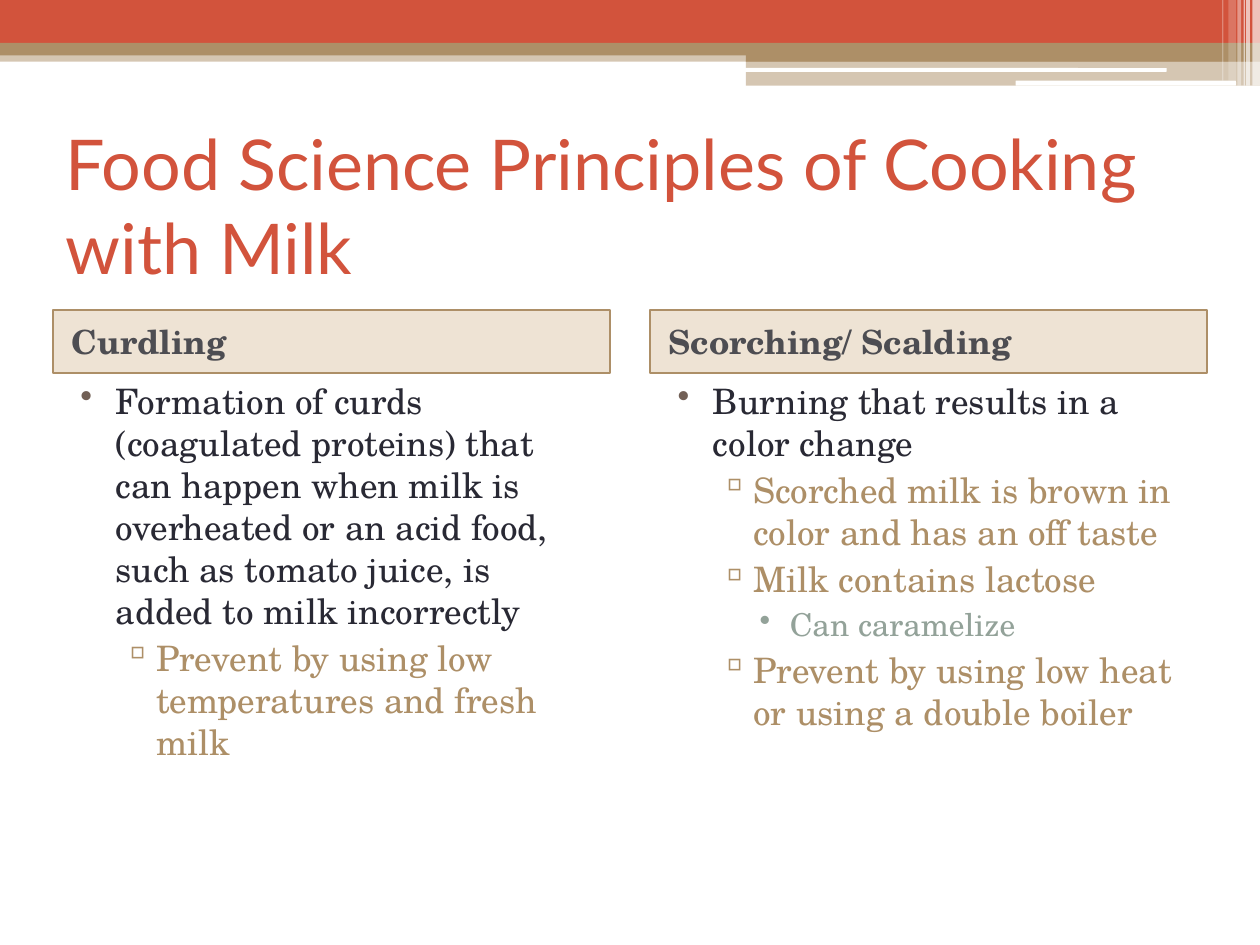
import pptx
import pptx.util
import pptx.dml.color
import pptx.enum.shapes
import pptx.enum.text
import pptx.oxml
import pptx.oxml.ns
from lxml import etree

Inches, Pt = pptx.util.Inches, pptx.util.Pt
KIND = pptx.enum.shapes.MSO_SHAPE
ANCHOR = pptx.enum.text.MSO_ANCHOR
LEFT = pptx.enum.text.PP_ALIGN.LEFT
SERIF = "TeX Gyre Schola"
RED, TAN, WHITE = "D2533C", "AD8F67", "FFFFFF"
qn = pptx.oxml.ns.qn


def paint(fmt, color, alpha=100):
    """Fill a shape, line or font with a colour, opaque by default."""
    fmt.solid()
    fmt.fore_color.rgb = pptx.dml.color.RGBColor.from_string(color)
    if alpha < 100:
        tint = fmt._xPr.find(qn("a:solidFill"))[0]
        etree.SubElement(tint, qn("a:alpha")).set("val", str(alpha * 1000))


def write(para, text, font, size, color, bold=False):
    """Add one run to a paragraph."""
    para.alignment = LEFT
    run = para.add_run()
    run.text = text
    run.font.name, run.font.size, run.font.bold = font, Pt(size), bold
    paint(run.font.fill, color)


prs = pptx.Presentation()
prs.slide_width, prs.slide_height = Inches(10), Inches(7.5)
slide = prs.slides.add_slide(prs.slide_layouts[5])
shapes = slide.shapes

# Top band: left, top, width, height, colour, opacity, kind
RECT, ROUND = KIND.RECTANGLE, KIND.ROUNDED_RECTANGLE
bars = [
    (0, 0.4, 10, 0.09, TAN, 50, RECT),
    (0, 0, 10, 0.34, RED, 100, RECT),
    (0, 0.34, 10, 0.1, TAN, 100, RECT),
    (5.92, 0.39, 4.08, 0.1, TAN, 100, RECT),
    (5.92, 0.48, 4.08, 0.2, TAN, 50, RECT),
    (5.91, 0.54, 3.35, 0.03, WHITE, 100, ROUND),
    (8.06, 0.64, 1.75, 0.04, WHITE, 100, ROUND),
]
# White stripes at the right end: left, width, height, opacity
stripes = [
    (9.94, 0.06, 0.68, 65),
    (9.89, 0.03, 0.68, 65),
    (9.87, 0.01, 0.68, 60),
    (9.82, 0.03, 0.68, 40),
    (9.75, 0.06, 0.64, 20),
    (9.7, 0.01, 0.64, 30),
]
bars += [(x, 0, w, h, WHITE, alpha, RECT) for x, w, h, alpha in stripes]
for x, y, w, h, color, alpha, kind in bars:
    bar = shapes.add_shape(kind, Inches(x), Inches(y), Inches(w), Inches(h))
    bar.shadow.inherit = False
    bar.line.fill.background()
    paint(bar.fill, color, alpha)

# Title
title = shapes.title
title.left, title.top = Inches(0.42), Inches(0.83)
title.width, title.height = Inches(9.17), Inches(1.59)
title.text_frame.vertical_anchor = ANCHOR.MIDDLE
title.text_frame.word_wrap = True
write(title.text_frame.paragraphs[0],
      "Food Science Principles of Cooking with Milk", "Lato", 40, RED)

# List levels: margin, indent, bullet, bullet colour, size, text colour
levels = [
    (0.4, -0.28, "•", "726056", 20, "292934"),
    (0.72, -0.27, "▫", TAN, 20, TAN),
    (1.01, -0.24, "•", "93A299", 18, "93A299"),
]
columns = [
    (0.42, "Curdling", [
        (0, "Formation of curds (coagulated proteins) that can happen when "
            "milk is overheated or an acid food, such as tomato juice, is "
            "added to milk incorrectly"),
        (1, "Prevent by using low temperatures and fresh milk"),
    ]),
    (5.16, "Scorching/ Scalding", [
        (0, "Burning that results in a color change"),
        (1, "Scorched milk is brown in color and has an off taste"),
        (1, "Milk contains lactose"),
        (2, "Can caramelize"),
        (1, "Prevent by using low heat or using a double boiler"),
    ]),
]
for x, label, items in columns:
    # Column heading
    head = shapes.add_shape(RECT, Inches(x), Inches(2.46), Inches(4.42), Inches(0.5))
    head.shadow.inherit = False
    paint(head.fill, "BE9256", 25)
    paint(head.line.fill, TAN)
    head.line.width = Pt(1)
    head.text_frame.word_wrap = True
    head.text_frame.vertical_anchor = ANCHOR.MIDDLE
    para = head.text_frame.paragraphs[0]
    para.space_before = Pt(3)
    para._p.get_or_add_pPr().set("marL", str(Inches(0.05)))
    write(para, label, SERIF, 19, "4D4D52", True)

    # Bulleted list
    frame = shapes.add_textbox(Inches(x), Inches(2.96), Inches(4.42), Inches(4.25)).text_frame
    frame.word_wrap = True
    for i, (level, text) in enumerate(items):
        margin, indent, mark, tone, size, color = levels[level]
        para = frame.add_paragraph() if i else frame.paragraphs[0]
        para.level = level
        para.space_before = Pt(3)
        props = para._p.get_or_add_pPr()
        props.set("marL", str(Inches(margin)))
        props.set("indent", str(Inches(indent)))
        tint = etree.SubElement(props, qn("a:buClr"))
        etree.SubElement(tint, qn("a:srgbClr")).set("val", tone)
        etree.SubElement(props, qn("a:buChar")).set("char", mark)
        write(para, text, SERIF, size, color)

prs.save("out.pptx")
